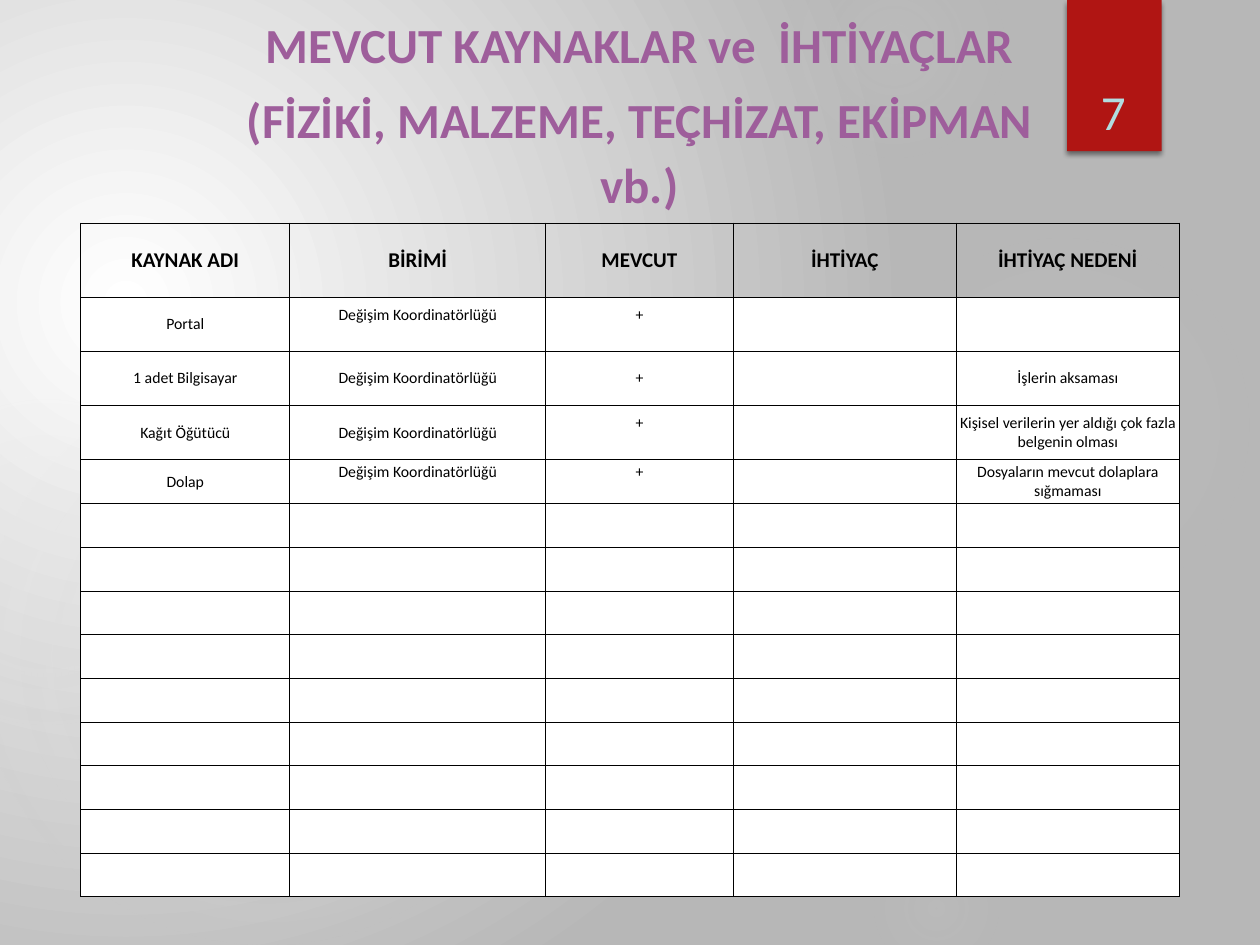
from lxml.etree import SubElement
from pptx import Presentation
from pptx.dml.color import RGBColor
from pptx.enum.shapes import MSO_SHAPE
from pptx.enum.text import MSO_ANCHOR, PP_ALIGN
from pptx.oxml import parse_xml
from pptx.oxml.ns import nsdecls, qn
from pptx.util import Inches, Pt

FONT = "Calibri"
TITLE = ["MEVCUT KAYNAKLAR ve  İHTİYAÇLAR",
         "(FİZİKİ, MALZEME, TEÇHİZAT, EKİPMAN vb.)"]
TITLE_FORMAT = {"size": Pt(28), "bold": True}
NUMBER_FORMAT = {"size": Pt(28)}
HEADER_FORMAT = {"size": Pt(12), "bold": True}
BODY_FORMAT = {"size": Pt(9), "bold": False}

UNIT = "Değişim Koordinatörlüğü"
ROWS = [
    ["KAYNAK ADI", "BİRİMİ", "MEVCUT", "İHTİYAÇ", "İHTİYAÇ NEDENİ"],
    ["Portal", UNIT, "+", "", ""],
    ["1 adet Bilgisayar", UNIT, "+", "", "İşlerin aksaması"],
    ["Kağıt Öğütücü", UNIT, "+", "",
     "Kişisel verilerin yer aldığı çok fazla belgenin olması"],
    ["Dolap", UNIT, "+", "", "Dosyaların mevcut dolaplara sığmaması"],
] + [[""] * 5] * 9
RAISED_CELLS = {(1, 1), (1, 2), (3, 2), (4, 1), (4, 2)}
COLUMN_WIDTHS = [1.66, 2.03, 1.49, 1.77, 1.77]
TABLE_HEIGHT = 5.35
TOP_ROW_HEIGHTS = [0.59, 0.43, 0.43, 0.43]

# left, top, diameter, [(stop, opacity), ...]
GLOWS = [
    (6.89, 1.83, 3.08, [(0, 7), (36, 6), (69, 0)]),
    (6.22, -0.5, 1.75, [(0, 14), (36, 7), (73, 0)]),
    (6.89, 6.67, 1.08, [(0, 9), (36, 5), (66, 0)]),
    (-0.17, 2.92, 4.58, [(0, 11), (36, 10), (75, 0)]),
    (-0.92, 3.17, 2.58, [(0, 8), (36, 8), (72, 0)]),
]


def color(hex_value):
    return RGBColor.from_string(hex_value)


def fill_radial(owner, fill, stops, focus):
    """Fill with a circular gradient; stops are (percent, colour, opacity)."""
    fill.solid()
    stop_xml = "".join(
        f'<a:gs pos="{position * 1000}"><a:srgbClr val="{hex_value}">'
        f'<a:alpha val="{opacity * 1000}"/></a:srgbClr></a:gs>'
        for position, hex_value, opacity in stops)
    edges = " ".join(f'{side}="{value * 1000}"' for side, value in zip("ltrb", focus))
    gradient = parse_xml(
        f'<a:gradFill {nsdecls("a")} rotWithShape="1"><a:gsLst>{stop_xml}</a:gsLst>'
        f'<a:path path="circle"><a:fillToRect {edges}/></a:path></a:gradFill>')
    solid = owner.element.xpath(".//a:solidFill")[0]
    solid.getparent().replace(solid, gradient)


def add_plain_shape(slide, kind, left, top, width, height):
    shape = slide.shapes.add_shape(
        kind, Inches(left), Inches(top), Inches(width), Inches(height))
    shape.shadow.inherit = False
    shape.line.fill.background()
    return shape


def add_glow(slide, left, top, diameter, stops):
    glow = add_plain_shape(slide, MSO_SHAPE.OVAL, left, top, diameter, diameter)
    fill_radial(glow, glow.fill, [(position, "D9D9D9", opacity)
                                  for position, opacity in stops], (50, 50, 50, 50))


def add_ribbon(slide):
    ribbon = add_plain_shape(slide, MSO_SHAPE.RECTANGLE, 8.47, 0, 0.75, 1.2)
    ribbon.fill.solid()
    ribbon.fill.fore_color.rgb = color("B01513")
    effects = ribbon.element.spPr.find(qn("a:effectLst"))
    shadow = SubElement(effects, qn("a:outerShdw"), blurRad=str(Pt(3)),
                        dist=str(Pt(2)), dir="5400000", rotWithShape="0")
    shadow_color = SubElement(shadow, qn("a:srgbClr"), val="000000")
    SubElement(shadow_color, qn("a:alpha"), val="45000")


def write_paragraph(paragraph, text, hex_value, font_format):
    paragraph.alignment = PP_ALIGN.CENTER
    run = paragraph.add_run()
    run.text = text
    run.font.name = FONT
    run.font.color.rgb = color(hex_value)
    for name, value in font_format.items():
        setattr(run.font, name, value)


def add_text(slide, box, lines, hex_value, font_format, paragraph_format):
    frame = slide.shapes.add_textbox(*map(Inches, box)).text_frame
    frame.word_wrap = True
    frame.vertical_anchor = MSO_ANCHOR.BOTTOM
    for index, line in enumerate(lines):
        paragraph = frame.add_paragraph() if index else frame.paragraphs[0]
        write_paragraph(paragraph, line, hex_value, font_format)
        for name, value in paragraph_format.items():
            setattr(paragraph, name, value)


def add_borders(cell):
    properties = cell._tc.get_or_add_tcPr()
    for side in ("lnL", "lnR", "lnT", "lnB"):
        line = SubElement(properties, qn(f"a:{side}"), w=str(Pt(0.5)))
        SubElement(SubElement(line, qn("a:solidFill")), qn("a:srgbClr"), val="000000")


def format_cell(cell, text, is_header, is_raised):
    cell.vertical_anchor = MSO_ANCHOR.MIDDLE
    for side in ("left", "right", "top", "bottom"):
        setattr(cell, f"margin_{side}", 0)
    if is_raised:
        cell.margin_bottom = Inches(0.15)
    add_borders(cell)
    if is_header:
        cell.fill.background()
    else:
        cell.fill.solid()
        cell.fill.fore_color.rgb = color("FFFFFF")
    if text:
        write_paragraph(cell.text_frame.paragraphs[0], text, "000000",
                        HEADER_FORMAT if is_header else BODY_FORMAT)


def add_resource_table(slide):
    table = slide.shapes.add_table(
        len(ROWS), len(COLUMN_WIDTHS), Inches(0.64), Inches(1.77),
        Inches(sum(COLUMN_WIDTHS)), Inches(TABLE_HEIGHT)).table
    table.first_row = table.horz_banding = False
    for column, width in zip(table.columns, COLUMN_WIDTHS):
        column.width = Inches(width)
    lower_count = len(ROWS) - len(TOP_ROW_HEIGHTS)
    lower_height = (TABLE_HEIGHT - sum(TOP_ROW_HEIGHTS)) / lower_count
    for row, height in zip(table.rows, TOP_ROW_HEIGHTS + [lower_height] * lower_count):
        row.height = Inches(height)
    for row_index, texts in enumerate(ROWS):
        for column_index, text in enumerate(texts):
            format_cell(table.cell(row_index, column_index), text, row_index == 0,
                        (row_index, column_index) in RAISED_CELLS)


def main():
    presentation = Presentation()
    presentation.slide_width = Inches(10)
    presentation.slide_height = Inches(7.5)
    slide = presentation.slides.add_slide(presentation.slide_layouts[6])
    fill_radial(slide, slide.background.fill,
                [(0, "FFFFFF", 100), (100, "B7B7B7", 100)], (45, 65, 125, 100))
    for glow in GLOWS:
        add_glow(slide, *glow)
    add_ribbon(slide)
    add_text(slide, (1.85, 0.73, 6.45, 1.01), TITLE, "9E5E9B", TITLE_FORMAT,
             {"line_spacing": 1.1, "space_after": Pt(6)})
    add_resource_table(slide)
    add_text(slide, (8.49, 0.32, 0.69, 0.84), ["7"], "B1DDE0", NUMBER_FORMAT, {})
    presentation.save("out.pptx")


if __name__ == "__main__":
    main()
